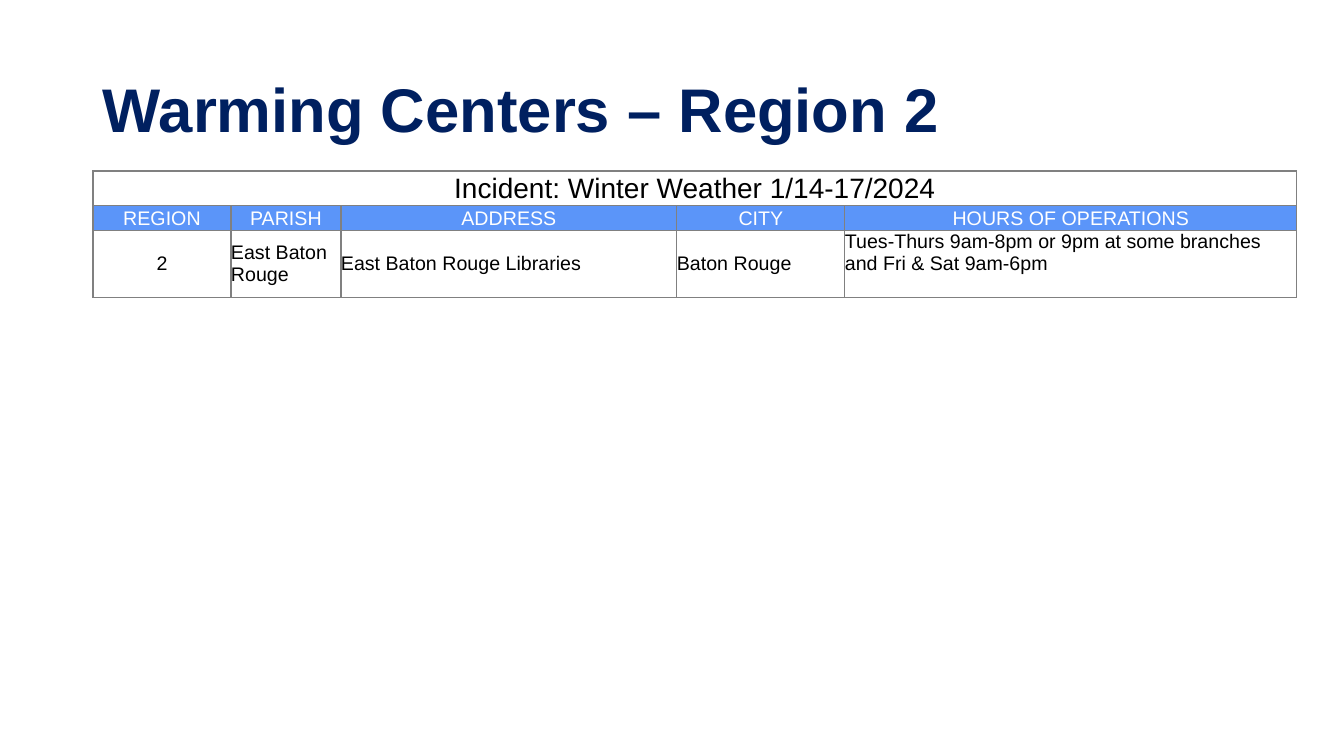
from pptx import Presentation
from pptx.dml.color import RGBColor
from pptx.enum.text import MSO_ANCHOR, PP_ALIGN
from pptx.oxml import parse_xml
from pptx.oxml.ns import nsdecls
from pptx.util import Emu, Pt

MIDDLE, TOP = MSO_ANCHOR.MIDDLE, MSO_ANCHOR.TOP
CENTER, LEFT = PP_ALIGN.CENTER, PP_ALIGN.LEFT
FONT = "Arial"
NAVY, BLACK, WHITE = "002060", "000000", "FFFFFF"
BLUE, GRAY = "5B95F9", "808080"

WIDTHS = [138, 110, 336, 168, 452]
HEIGHTS = [32, 24, 67]
BANNER = "Incident: Winter Weather 1/14-17/2024"
HEADS = ["REGION", "PARISH", "ADDRESS", "CITY", "HOURS OF OPERATIONS"]
CENTERS = [
    "2",
    "East Baton Rouge",
    "East Baton Rouge Libraries",
    "Baton Rouge",
    "Tues-Thurs 9am-8pm or 9pm at some branches and Fri & Sat 9am-6pm",
]


def px(n):
    return Emu(round(n * 914400 / 100.8))


def color(code):
    return RGBColor.from_string(code)


def style(para, size, ink, align=LEFT, bold=False):
    para.alignment = align
    for run in para.runs:
        font = run.font
        font.name, font.size, font.bold = FONT, Pt(size), bold
        font.color.rgb = color(ink)


def add_title(slide, text):
    box = slide.shapes.add_textbox(px(93), px(40), px(1159), px(146))
    frame = box.text_frame
    frame.word_wrap = True
    frame.vertical_anchor = MIDDLE
    frame.text = text
    para = frame.paragraphs[0]
    para.line_spacing = 0.9
    style(para, 44, NAVY, bold=True)


def add_border(cell):
    props = cell._tc.get_or_add_tcPr()
    for at, side in enumerate(["lnL", "lnR", "lnT", "lnB"]):
        props.insert(at, parse_xml(
            f'<a:{side} {nsdecls("a")} w="12700"><a:solidFill>'
            f'<a:srgbClr val="{GRAY}"/></a:solidFill></a:{side}>'))


def fill_cell(cell, text, size, ink, fill, align, inset=0, anchor=MIDDLE):
    cell.margin_left = cell.margin_right = cell.margin_top = px(inset)
    cell.margin_bottom = 0
    cell.vertical_anchor = anchor
    if fill:
        cell.fill.solid()
        cell.fill.fore_color.rgb = color(fill)
    else:
        cell.fill.background()
    cell.text_frame.text = text
    style(cell.text_frame.paragraphs[0], size, ink, align)


def add_grid(slide):
    grid = slide.shapes.add_table(
        len(HEIGHTS), len(WIDTHS), px(93), px(171),
        px(sum(WIDTHS)), px(sum(HEIGHTS))).table
    grid.first_row = grid.horz_banding = False
    for col, width in zip(grid.columns, WIDTHS):
        col.width = px(width)
    for row, height in zip(grid.rows, HEIGHTS):
        row.height = px(height)
    grid.cell(0, 0).merge(grid.cell(0, len(WIDTHS) - 1))
    fill_cell(grid.cell(0, 0), BANNER, 20, BLACK, None, CENTER, 1)
    last = len(WIDTHS) - 1
    for col, (head, entry) in enumerate(zip(HEADS, CENTERS)):
        fill_cell(grid.cell(1, col), head, 14, WHITE, BLUE, CENTER, 1)
        fill_cell(grid.cell(2, col), entry, 14, BLACK, WHITE,
                  LEFT if col else CENTER,
                  anchor=TOP if col == last else MIDDLE)
    for cell in grid.iter_cells():
        add_border(cell)


def main():
    deck = Presentation()
    deck.slide_width, deck.slide_height = px(1344), px(756)
    slide = deck.slides.add_slide(deck.slide_layouts[6])
    add_title(slide, "Warming Centers – Region 2")
    add_grid(slide)
    deck.save("out.pptx")


if __name__ == "__main__":
    main()
